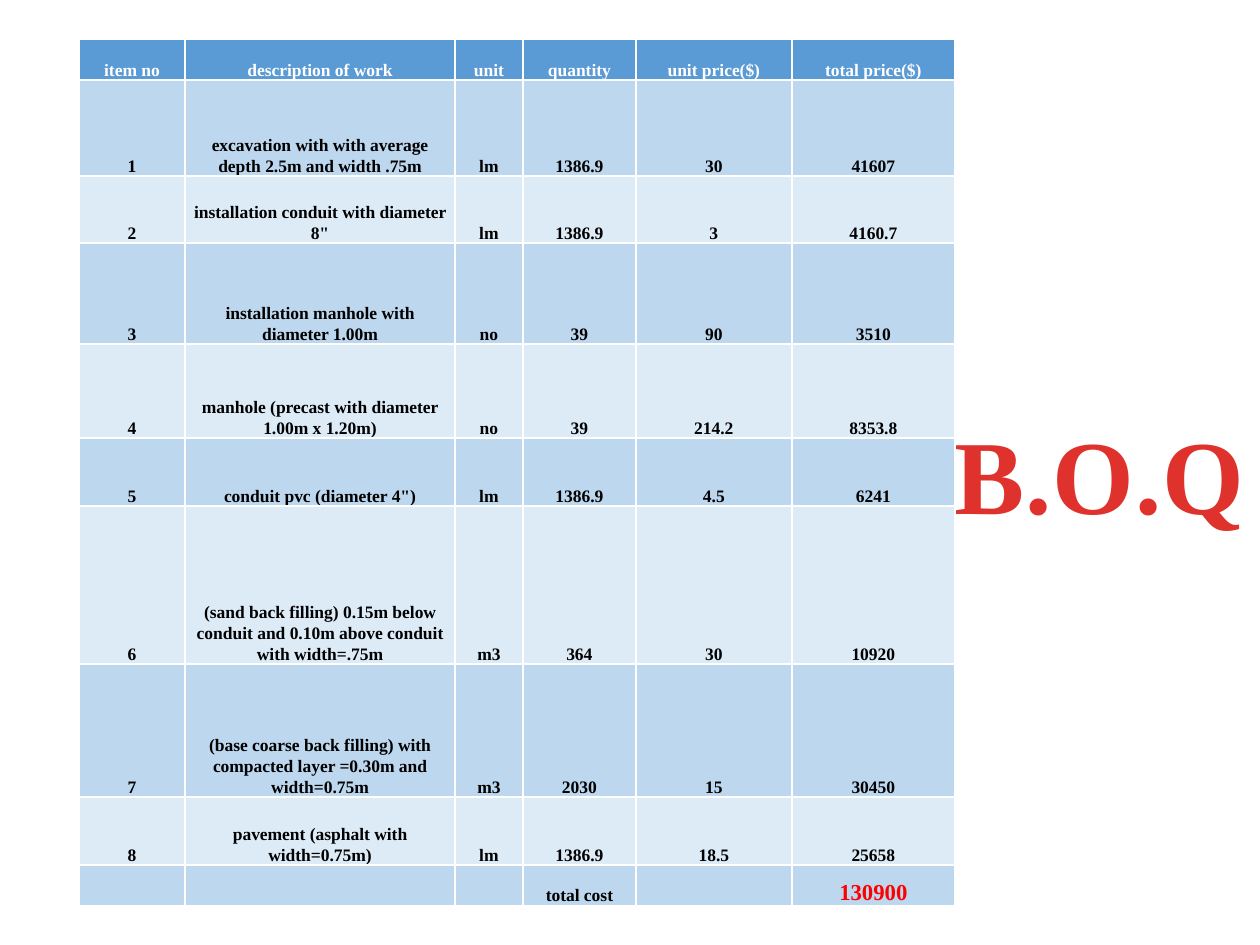
from lxml import etree
from pptx import Presentation
from pptx import util as u
from pptx.dml import color
from pptx.enum import text
from pptx.oxml import ns

SCALE = 914400 / 126
FONT = "Times New Roman"
COLUMN_WIDTHS = [106, 270, 68, 113, 156, 163]
ROW_HEIGHTS = [41, 96, 67, 101, 94, 68, 158, 133, 68, 41]
ROWS = [
    ["item no", "description of work", "unit", "quantity", "unit price($)", "total price($)"],
    ["1", "excavation with with average depth 2.5m and width .75m", "lm", "1386.9", "30", "41607"],
    ["2", "installation conduit with diameter 8\"", "lm", "1386.9", "3", "4160.7"],
    ["3", "installation manhole with diameter 1.00m", "no", "39", "90", "3510"],
    ["4", "manhole (precast with diameter 1.00m x 1.20m)", "no", "39", "214.2", "8353.8"],
    ["5", "conduit pvc (diameter 4\")", "lm", "1386.9", "4.5", "6241"],
    ["6", "(sand back filling) 0.15m below conduit and 0.10m above conduit with width=.75m",
     "m3", "364", "30", "10920"],
    ["7", "(base coarse back filling) with compacted layer =0.30m and width=0.75m",
     "m3", "2030", "15", "30450"],
    ["8", "pavement (asphalt with width=0.75m)", "lm", "1386.9", "18.5", "25658"],
    ["", "", "", "total cost", "", "130900"],
]


def px(length):
    return u.Emu(round(length * SCALE))


def rgb(value):
    return color.RGBColor.from_string(value)


def apply(target, values):
    for name, value in values.items():
        setattr(target, name, value)


def write(paragraph, content, size, colour):
    paragraph.alignment = text.PP_ALIGN.CENTER
    if not content:
        paragraph._p.get_or_add_endParaRPr().set("sz", str(size * 100))
        return None
    run = paragraph.add_run()
    run.text = content
    apply(run.font, {"name": FONT, "size": u.Pt(size), "bold": True})
    run.font.color.rgb = rgb(colour)
    return run


def add_border(cell, side, width):
    properties = cell._tc.get_or_add_tcPr()
    line = etree.SubElement(properties, ns.qn(f"a:ln{side}"), w=str(u.Pt(width)))
    fill = etree.SubElement(line, ns.qn("a:solidFill"))
    etree.SubElement(fill, ns.qn("a:srgbClr"), val="FFFFFF")


def format_cell(cell, content, fill, size, colour, borders):
    apply(cell, {
        "vertical_anchor": text.MSO_ANCHOR.BOTTOM,
        "margin_left": px(6), "margin_right": px(6),
        "margin_top": 0, "margin_bottom": 0,
    })
    for side, width in borders.items():
        add_border(cell, side, width)
    cell.fill.solid()
    cell.fill.fore_color.rgb = rgb(fill)
    paragraph = cell.text_frame.paragraphs[0]
    paragraph.line_spacing = 1.07
    write(paragraph, content, size, colour)


def add_cost_table(slide):
    frame = slide.shapes.add_table(
        len(ROWS), len(COLUMN_WIDTHS), px(79), px(39),
        px(sum(COLUMN_WIDTHS)), px(sum(ROW_HEIGHTS)))
    table = frame.table
    for column, width in zip(table.columns, COLUMN_WIDTHS):
        column.width = px(width)
    for row, height in zip(table.rows, ROW_HEIGHTS):
        row.height = px(height)
    last_row, last_column = len(ROWS) - 1, len(COLUMN_WIDTHS) - 1
    for i, row in enumerate(ROWS):
        fill = "5B9BD5" if i == 0 else ("DDEBF7", "BDD7EE")[i % 2]
        borders = {"L": 1, "R": 1, "T": 1.5 if i == 1 else 1, "B": 1.5 if i == 0 else 1}
        for j, content in enumerate(row):
            size, colour = 10, "FFFFFF" if i == 0 else "000000"
            if (i, j) == (last_row, last_column):
                size, colour = 13, "FF0000"
            format_cell(table.cell(i, j), content, fill, size, colour, borders)


def add_title(slide, content):
    title = slide.shapes.title
    apply(title, {"left": px(886), "top": px(403), "width": px(427), "height": px(140)})
    apply(title.text_frame, {
        "word_wrap": True,
        "auto_size": text.MSO_AUTO_SIZE.SHAPE_TO_FIT_TEXT,
        "vertical_anchor": text.MSO_ANCHOR.TOP,
    })
    run = write(title.text_frame.paragraphs[0], content, 60, "E0322D")
    run.font._element.set("spc", "50")


def main():
    presentation = Presentation()
    apply(presentation, {"slide_width": px(1260), "slide_height": px(945)})
    slide = presentation.slides.add_slide(presentation.slide_layouts[5])
    add_cost_table(slide)
    add_title(slide, "B.O.Q")
    presentation.save("out.pptx")


if __name__ == "__main__":
    main()
